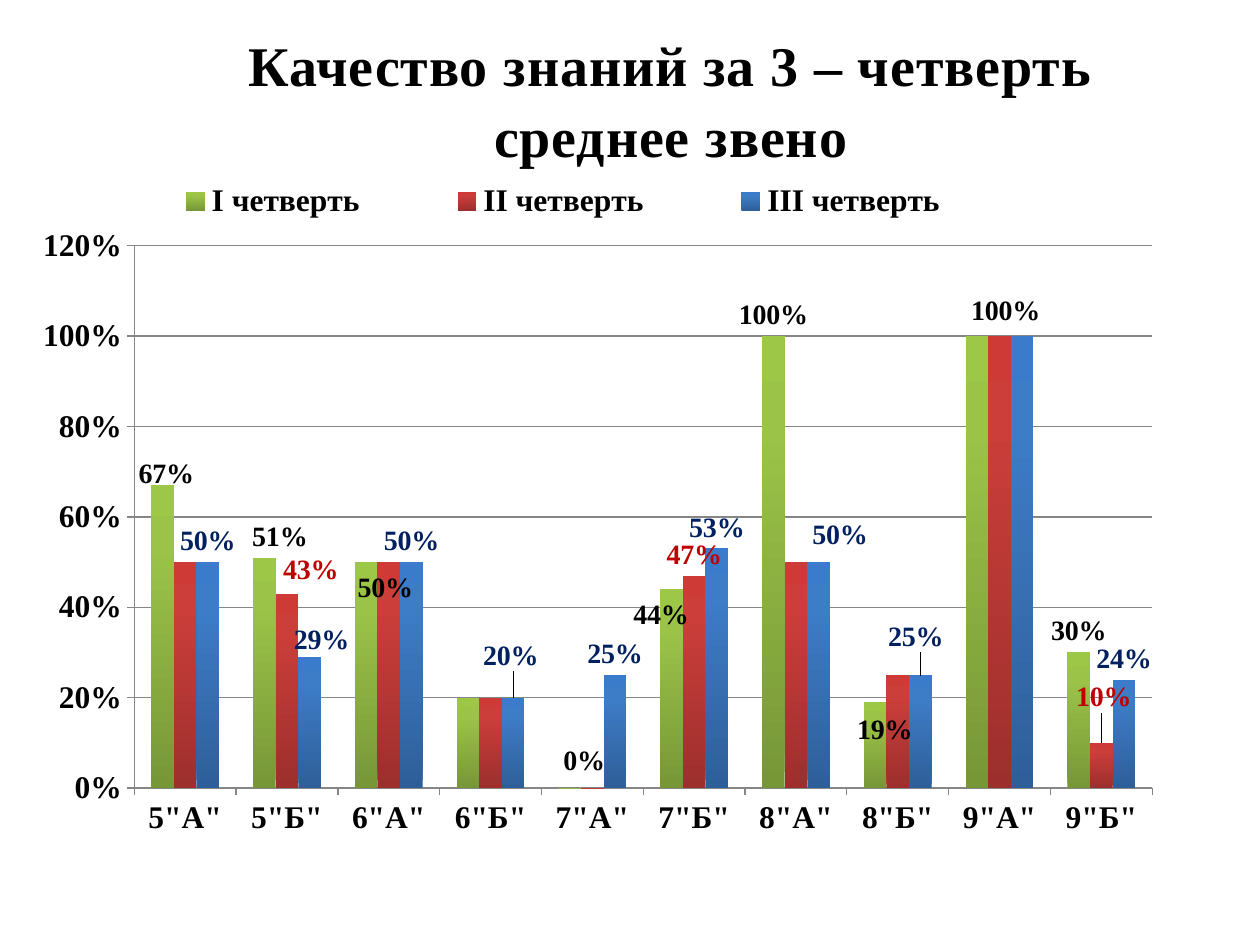
import pptx
import pptx.chart.data
import pptx.dml.color
import pptx.enum.chart
import pptx.enum.text
import pptx.oxml
import pptx.oxml.ns
import pptx.util
import copy

Inches = pptx.util.Inches
Pt = pptx.util.Pt
RGBColor = pptx.dml.color.RGBColor
qn = pptx.oxml.ns.qn

BLACK = RGBColor(0x00, 0x00, 0x00)
RED = RGBColor(0xC0, 0x00, 0x00)
NAVY = RGBColor(0x00, 0x20, 0x60)
GRAY = RGBColor(0x86, 0x86, 0x86)
GREENS = [RGBColor(0x77, 0x97, 0x37), RGBColor(0x9B, 0xC3, 0x48), RGBColor(0x9D, 0xC7, 0x46)]
REDS = [RGBColor(0x9C, 0x2F, 0x2D), RGBColor(0xCB, 0x3E, 0x3A), RGBColor(0xCE, 0x3B, 0x37)]
BLUES = [RGBColor(0x2F, 0x5F, 0x99), RGBColor(0x3D, 0x7C, 0xC7), RGBColor(0x3A, 0x7C, 0xCB)]
STOPS = [0, 0.8, 1]

CLASSES = [f'{grade}"{letter}"' for grade in range(5, 10) for letter in "АБ"]

# name, values, bar colours, label colour, label shifts in percent of the chart, hidden labels
QUARTERS = [
    ("I четверть", [0.67, 0.51, 0.5, 0.2, 0, 0.44, 1, 0.19, 1, 0.3], GREENS, BLACK,
     {0: (0.3, 1.3), 1: (1.3, 0), 2: (1.6, 6.2), 4: (1.2, -0.8),
      5: (-0.9, 6.2), 7: (0.8, 6.5), 8: (2.4, -0.5)}, [3]),
    ("II четверть", [0.5, 0.43, 0.5, 0.2, 0, 0.47, 0.5, 0.25, 1, 0.1], REDS, RED,
     {1: (2, -0.3), 9: (0.2, -3.3)}, [0, 2, 3, 4, 6, 7, 8]),
    ("III четверть", [0.5, 0.29, 0.5, 0.2, 0.25, 0.53, 0.5, 0.25, 1, 0.24], BLUES, NAVY,
     {1: (1, 0.5), 3: (-0.2, -2.8), 6: (1.8, -0.8), 7: (-0.4, -2.3)}, [8]),
]


class GradeSlide:
    font_name = "Times New Roman"

    def __init__(self, slide):
        self.slide = slide

    def style(self, font, size, color=BLACK):
        font.name = self.font_name
        font.size = Pt(size)
        font.bold = True
        font.color.rgb = color

    def title(self, text, left, top, width, height):
        box = self.slide.shapes.add_textbox(Inches(left), Inches(top), Inches(width), Inches(height))
        frame = box.text_frame
        frame.word_wrap = True
        heading = frame.paragraphs[0]
        heading.text = text
        heading.alignment = pptx.enum.text.PP_ALIGN.CENTER
        heading.line_spacing = 1.06
        for run in heading.runs:
            self.style(run.font, 32)
            run.font._element.set("spc", "50")

    def layout(self, x, y, width=None, height=None, inner=False):
        parts = [("layoutTarget", "inner")] if inner else []
        if width:
            parts += [("xMode", "edge"), ("yMode", "edge")]
        parts += [("x", x), ("y", y)]
        if width:
            parts += [("w", width), ("h", height)]
        body = "".join(f'<c:{tag} val="{value}"/>' for tag, value in parts)
        return pptx.oxml.parse_xml(
            f'<c:layout {pptx.oxml.ns.nsdecls("c")}><c:manualLayout>{body}</c:manualLayout></c:layout>')

    def columns(self, classes, quarters, left, top, width, height):
        data = pptx.chart.data.CategoryChartData(number_format="0%")
        data.categories = classes
        for name, values, *_ in quarters:
            data.add_series(name, values)
        chart = self.slide.shapes.add_chart(
            pptx.enum.chart.XL_CHART_TYPE.COLUMN_CLUSTERED,
            Inches(left), Inches(top), Inches(width), Inches(height), data).chart
        chart.has_title = False
        self.style(chart.font, 18)
        plot = chart.plots[0]
        plot.gap_width = 150
        plot.overlap = 0
        plot.vary_by_categories = False
        self.axes(chart)
        self.legend(chart)
        plot_area = chart._chartSpace.find(".//" + qn("c:plotArea"))
        for automatic in plot_area.findall(qn("c:layout")):
            plot_area.remove(automatic)
        plot_area.insert(0, self.layout(0.08, 0.104, 0.855, 0.721, inner=True))
        for series, (_, _, shades, color, shifts, hidden) in zip(plot.series, quarters):
            self.gradient(series, shades)
            self.labels(series, color, shifts, hidden)

    def axes(self, chart):
        percent = chart.value_axis
        percent.minimum_scale = 0
        percent.maximum_scale = 1.2
        percent.major_unit = 0.2
        percent.has_major_gridlines = True
        percent.major_gridlines.format.line.color.rgb = GRAY
        percent.tick_labels.number_format = "0%"
        percent.tick_labels.number_format_is_linked = False
        for axis in (percent, chart.category_axis):
            axis.major_tick_mark = pptx.enum.chart.XL_TICK_MARK.OUTSIDE
            axis.format.line.color.rgb = GRAY
            self.style(axis.tick_labels.font, 18)

    def legend(self, chart):
        chart.has_legend = True
        legend = chart.legend
        legend.position = pptx.enum.chart.XL_LEGEND_POSITION.RIGHT
        legend.include_in_layout = False
        self.style(legend.font, 18)
        for automatic in legend._element.findall(qn("c:layout")):
            legend._element.remove(automatic)
        legend._element.find(qn("c:legendPos")).addnext(self.layout(0.05, 0.01, 0.78, 0.07))

    def gradient(self, series, shades):
        fill = series.format.fill
        fill.gradient()
        fill.gradient_angle = 90
        stop_list = series._element.find(".//" + qn("a:gsLst"))
        stop_list.append(copy.deepcopy(stop_list[-1]))
        for stop, position, shade in zip(fill.gradient_stops, STOPS, shades):
            stop.position = position
            stop.color.rgb = shade

    def labels(self, series, color, shifts, hidden):
        outside = pptx.enum.chart.XL_LABEL_POSITION.OUTSIDE_END
        labels = series.data_labels
        labels.show_value = True
        labels.position = outside
        labels.number_format = "0%"
        labels.number_format_is_linked = False
        self.style(labels.font, 16, color)
        for index in sorted([*shifts, *hidden]):
            label = series.points[index].data_label
            label.position = outside
            self.style(label.font, 16, color)
            element = labels._element.findall(qn("c:dLbl"))[-1]
            if index in hidden:
                for part in list(element)[1:]:
                    element.remove(part)
                element.append(pptx.oxml.parse_xml(
                    f'<c:delete {pptx.oxml.ns.nsdecls("c")} val="1"/>'))
            else:
                x, y = shifts[index]
                element[0].addnext(self.layout(x / 100, y / 100))


def main():
    presentation = pptx.Presentation()
    presentation.slide_width = Inches(10)
    presentation.slide_height = Inches(7.5)
    grades = GradeSlide(presentation.slides.add_slide(presentation.slide_layouts[6]))
    grades.columns(CLASSES, QUARTERS, 0.31, 1.33, 9.45, 5.97)
    grades.title("Качество знаний за 3 – четверть\vсреднее звено", 0.86, 0.16, 8.93, 1.18)
    presentation.save("out.pptx")


if __name__ == "__main__":
    main()
